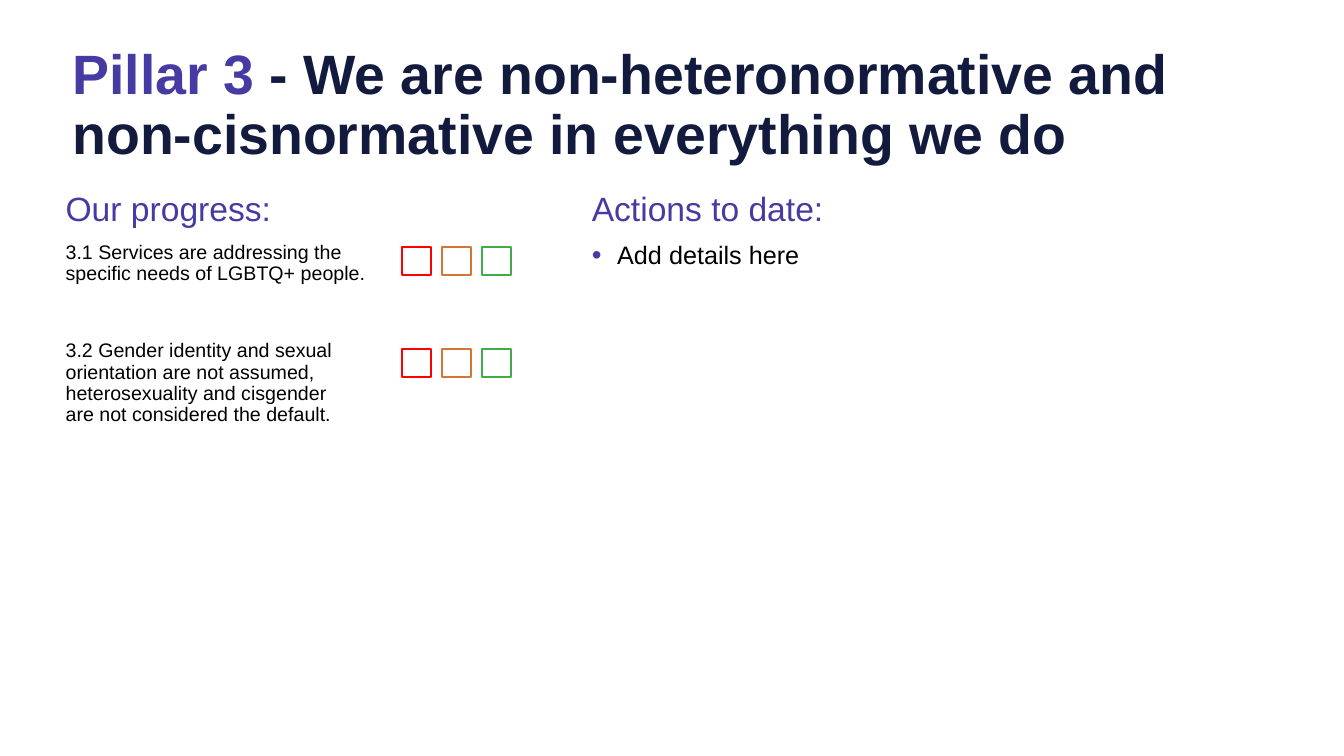
from dataclasses import dataclass

from lxml.etree import SubElement
from pptx import Presentation
from pptx.dml.color import RGBColor as Color
from pptx.enum.shapes import MSO_SHAPE as Shape
from pptx.enum.text import MSO_ANCHOR as Anchor, MSO_AUTO_SIZE as AutoSize, PP_ALIGN as Align
from pptx.oxml.ns import qn
from pptx.util import Cm, Pt


@dataclass(frozen=True)
class Theme:
    font: str = "Arial"
    purple: str = "453BA3"
    navy: str = "121A3D"
    black: str = "000000"
    ratings: tuple = ("FF0000", "D87333", "41AD49")
    title: float = 39.6
    heading: float = 24
    bullet: float = 18
    item: float = 14


theme = Theme()


def place(box, left, top, width, height):
    box.left, box.top, box.width, box.height = Cm(left), Cm(top), Cm(width), Cm(height)
    box.text_frame.word_wrap = True
    box.text_frame.auto_size = AutoSize.NONE
    return box.text_frame


def add_text(para, text, size, color, before=10, bold=False, indent=0):
    para.alignment = Align.LEFT
    para.line_spacing = 0.9
    para.space_before = Pt(before)
    properties = para._p.get_or_add_pPr()
    properties.set("marL", str(Cm(indent)))
    properties.set("indent", str(-Cm(indent)))
    if indent:
        bullet_color = SubElement(properties, qn("a:buClr"))
        SubElement(bullet_color, qn("a:srgbClr"), val=theme.purple)
        SubElement(properties, qn("a:buSzPct"), val="110000")
        SubElement(properties, qn("a:buFont"), typeface=theme.font)
        SubElement(properties, qn("a:buChar"), char="•")
    elif properties.find(qn("a:buNone")) is None:
        SubElement(properties, qn("a:buNone"))
    for number, line in enumerate(text.split("\n")):
        if number:
            para.add_line_break()
        span = para.add_run()
        span.text = line
        span.font.name = theme.font
        span.font.size = Pt(size)
        span.font.bold = bold
        span.font.color.rgb = Color.from_string(color)


# Deck and page
deck = Presentation()
deck.slide_width, deck.slide_height = Cm(33.87), Cm(19.05)
page = deck.slides.add_slide(deck.slide_layouts[3])
title, progress, actions = page.placeholders

# Title
frame = place(title, 1.57, 0.84, 30, 3.68)
frame.vertical_anchor = Anchor.MIDDLE
para = frame.paragraphs[0]
add_text(para, "Pillar 3 ", theme.title, theme.purple, before=0, bold=True)
add_text(para, "- We are non-heteronormative and non-cisnormative in everything we do",
         theme.title, theme.navy, before=0, bold=True)

# Progress column
frame = place(progress, 1.4, 4.72, 11.89, 12.57)
add_text(frame.paragraphs[0], "Our progress:", theme.heading, theme.purple)
add_text(frame.add_paragraph(),
         "3.1 Services are addressing the\nspecific needs of LGBTQ+ people.",
         theme.item, theme.black)
add_text(frame.add_paragraph(),
         "3.2 Gender identity and sexual\norientation are not assumed,\n"
         "heterosexuality and cisgender\nare not considered the default.",
         theme.item, theme.black, before=40)

# Actions column
frame = place(actions, 14.66, 4.72, 16.76, 12.57)
add_text(frame.paragraphs[0], "Actions to date:", theme.heading, theme.purple)
add_text(frame.add_paragraph(), "Add details here", theme.bullet, theme.black, indent=0.64)

# Red, amber and green tick boxes beside each item
for row in range(2):
    for column, color in enumerate(theme.ratings):
        tick_box = page.shapes.add_shape(
            Shape.RECTANGLE, Cm(10.13 + column * 1.01), Cm(6.22 + row * 2.57), Cm(0.74), Cm(0.71))
        tick_box.shadow.inherit = False
        tick_box.fill.background()
        tick_box.line.color.rgb = Color.from_string(color)
        tick_box.line.width = Pt(1.5)

deck.save("out.pptx")
